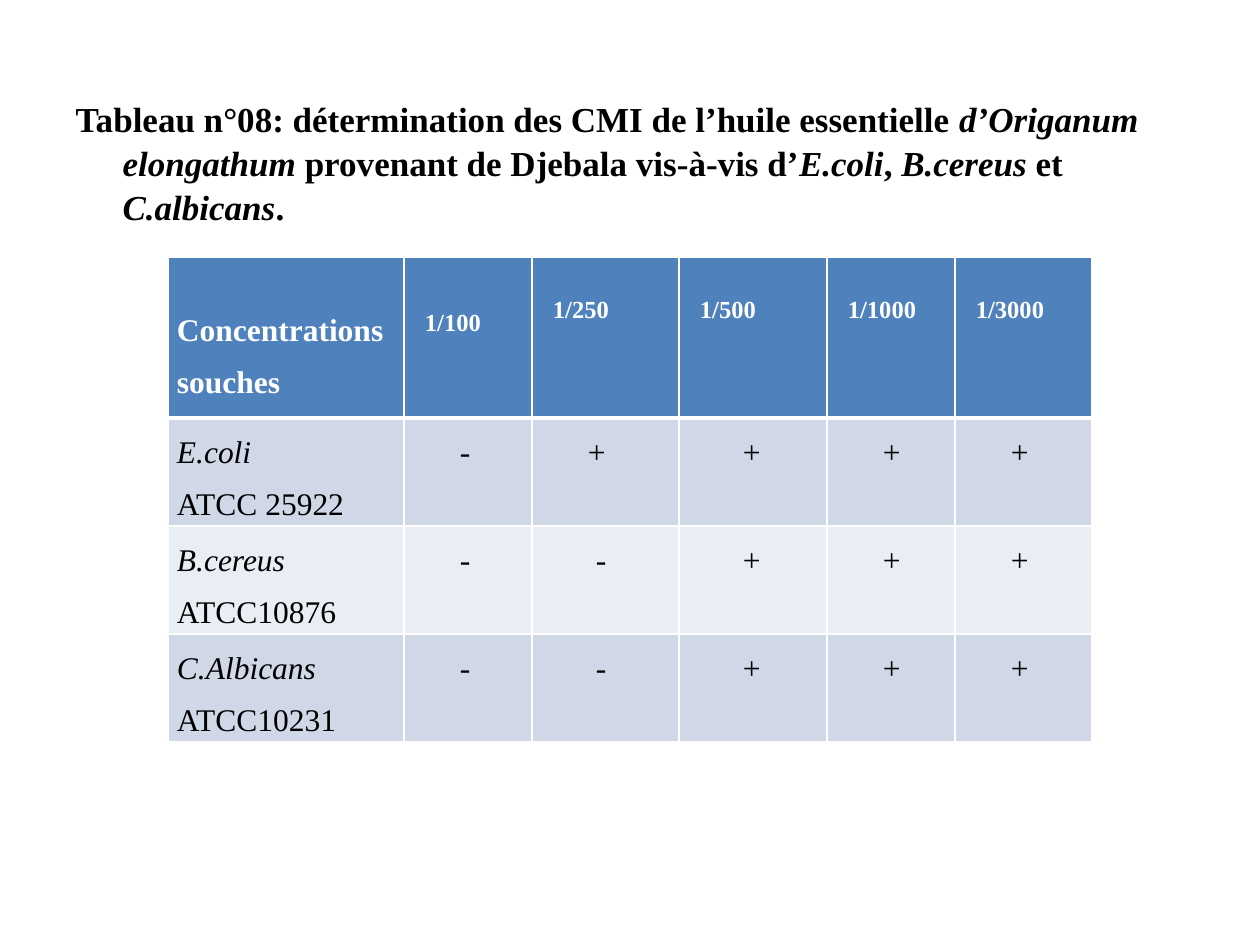
from dataclasses import dataclass

from lxml.etree import SubElement
from pptx import Presentation
from pptx.dml.color import RGBColor
from pptx.enum.text import MSO_ANCHOR, MSO_AUTO_SIZE, PP_ALIGN
from pptx.oxml.ns import qn
from pptx.util import Emu, Pt


@dataclass(frozen=True)
class Theme:
    font: str = "Times New Roman"
    black: str = "000000"
    white: str = "FFFFFF"
    header_fill: str = "4F81BD"
    band_fills: tuple = ("D0D8E8", "E9EDF4")
    title_size: int = 20
    body_size: int = 18
    header_size: int = 14


@dataclass(frozen=True)
class Concentration:
    label: str
    width: int
    top_margin: int


@dataclass(frozen=True)
class Strain:
    species: str
    reference: str
    results: str
    mark_indents: tuple


THEME = Theme()
EMU_PER_PX = 914400 / 126
SLIDE_WIDTH, SLIDE_HEIGHT = 1260, 945
TABLE_LEFT, TABLE_TOP = 168, 257
NAME_WIDTH, NAME_TOP_MARGIN = 236, 39
HEADER_HEIGHT, ROW_HEIGHT = 161, 108
CELL_MARGIN = 9
LABEL_INDENT = 12
TITLE_INDENT = 47
NEAR, FAR = 47, 55

# (text, italic)
TITLE_PARTS = (
    ("Tableau n°08: détermination des CMI de l’huile essentielle ", False),
    ("d’Origanum elongathum", True),
    (" provenant de Djebala vis-à-vis d’", False),
    ("E.coli", True),
    (", ", False),
    ("B.cereus", True),
    (" et ", False),
    ("C.albicans", True),
    (".", False),
)
CONCENTRATIONS = (
    Concentration("1/100", 128, 39),
    Concentration("1/250", 147, 26),
    Concentration("1/500", 148, 26),
    Concentration("1/1000", 128, 26),
    Concentration("1/3000", 137, 26),
)
STRAINS = (
    Strain("E.coli", "ATCC 25922", "-++++", (NEAR, NEAR, FAR, NEAR, NEAR)),
    Strain("B.cereus", "ATCC10876", "--+++", (NEAR, FAR, FAR, NEAR, NEAR)),
    Strain("C.Albicans", "ATCC10231", "--+++", (NEAR, FAR, FAR, NEAR, NEAR)),
)


def px(length: int) -> Emu:
    return Emu(round(length * EMU_PER_PX))


def format_run(run, size: int, color: str, bold: bool = False, italic: bool = False) -> None:
    run.font.name = THEME.font
    run.font.size = Pt(size)
    run.font.bold = bold
    run.font.italic = italic
    run.font.color.rgb = RGBColor.from_string(color)


def set_indent(paragraph, margin: int, first_line: int = 0) -> None:
    properties = paragraph._p.get_or_add_pPr()
    properties.set("marL", str(px(margin)))
    properties.set("indent", str(px(first_line)))


def add_borders(cell, bottom_width: int) -> None:
    properties = cell._tc.get_or_add_tcPr()
    for side, width in (("L", 1), ("R", 1), ("T", 1), ("B", bottom_width)):
        line = SubElement(properties, qn(f"a:ln{side}"), w=str(Pt(width)))
        fill = SubElement(line, qn("a:solidFill"))
        SubElement(fill, qn("a:srgbClr"), val=THEME.white)


def fill_cell(cell, lines: tuple, fill: str, size: int, color: str, *, bold: bool = False,
              italic_first: bool = False, indent: int = 0, top_margin: int = 0,
              bottom_border: int = 1) -> None:
    add_borders(cell, bottom_border)
    cell.fill.solid()
    cell.fill.fore_color.rgb = RGBColor.from_string(fill)
    cell.margin_left = cell.margin_right = px(CELL_MARGIN)
    cell.margin_top, cell.margin_bottom = px(top_margin), 0
    cell.vertical_anchor = MSO_ANCHOR.TOP
    cell.text_frame.text = "\n".join(lines)
    for index, paragraph in enumerate(cell.text_frame.paragraphs):
        paragraph.line_spacing = 1.5
        set_indent(paragraph, indent)
        for run in paragraph.runs:
            format_run(run, size, color, bold, italic_first and index == 0)


def add_title(slide) -> None:
    title = slide.shapes.title
    title.left, title.top = px(63), px(90)
    title.width, title.height = px(1134), px(140)
    frame = title.text_frame
    frame.word_wrap = True
    frame.auto_size = MSO_AUTO_SIZE.NONE
    frame.vertical_anchor = MSO_ANCHOR.TOP
    paragraph = frame.paragraphs[0]
    paragraph.alignment = PP_ALIGN.LEFT
    paragraph.line_spacing = 1.04
    set_indent(paragraph, TITLE_INDENT, -TITLE_INDENT)
    for text, italic in TITLE_PARTS:
        run = paragraph.add_run()
        run.text = text
        format_run(run, THEME.title_size, THEME.black, bold=True, italic=italic)


def add_results_table(slide) -> None:
    widths = [NAME_WIDTH, *(item.width for item in CONCENTRATIONS)]
    heights = [HEADER_HEIGHT] + [ROW_HEIGHT] * len(STRAINS)
    table = slide.shapes.add_table(
        len(heights), len(widths), px(TABLE_LEFT), px(TABLE_TOP),
        px(sum(widths)), px(sum(heights))).table
    for column, width in zip(table.columns, widths):
        column.width = px(width)
    for row, height in zip(table.rows, heights):
        row.height = px(height)

    fill_cell(table.cell(0, 0), ("Concentrations", "souches"), THEME.header_fill,
              THEME.body_size, THEME.white, bold=True,
              top_margin=NAME_TOP_MARGIN, bottom_border=3)
    for column, item in enumerate(CONCENTRATIONS, start=1):
        fill_cell(table.cell(0, column), (item.label,), THEME.header_fill,
                  THEME.header_size, THEME.white, bold=True, indent=LABEL_INDENT,
                  top_margin=item.top_margin, bottom_border=3)

    for row, strain in enumerate(STRAINS, start=1):
        fill = THEME.band_fills[(row - 1) % 2]
        fill_cell(table.cell(row, 0), (strain.species, strain.reference), fill,
                  THEME.body_size, THEME.black, italic_first=True)
        for column, (mark, indent) in enumerate(zip(strain.results, strain.mark_indents), start=1):
            fill_cell(table.cell(row, column), (mark,), fill,
                      THEME.body_size, THEME.black, indent=indent)


def main() -> None:
    presentation = Presentation()
    presentation.slide_width, presentation.slide_height = px(SLIDE_WIDTH), px(SLIDE_HEIGHT)
    slide = presentation.slides.add_slide(presentation.slide_layouts[5])
    add_title(slide)
    add_results_table(slide)
    presentation.save("out.pptx")


if __name__ == "__main__":
    main()
